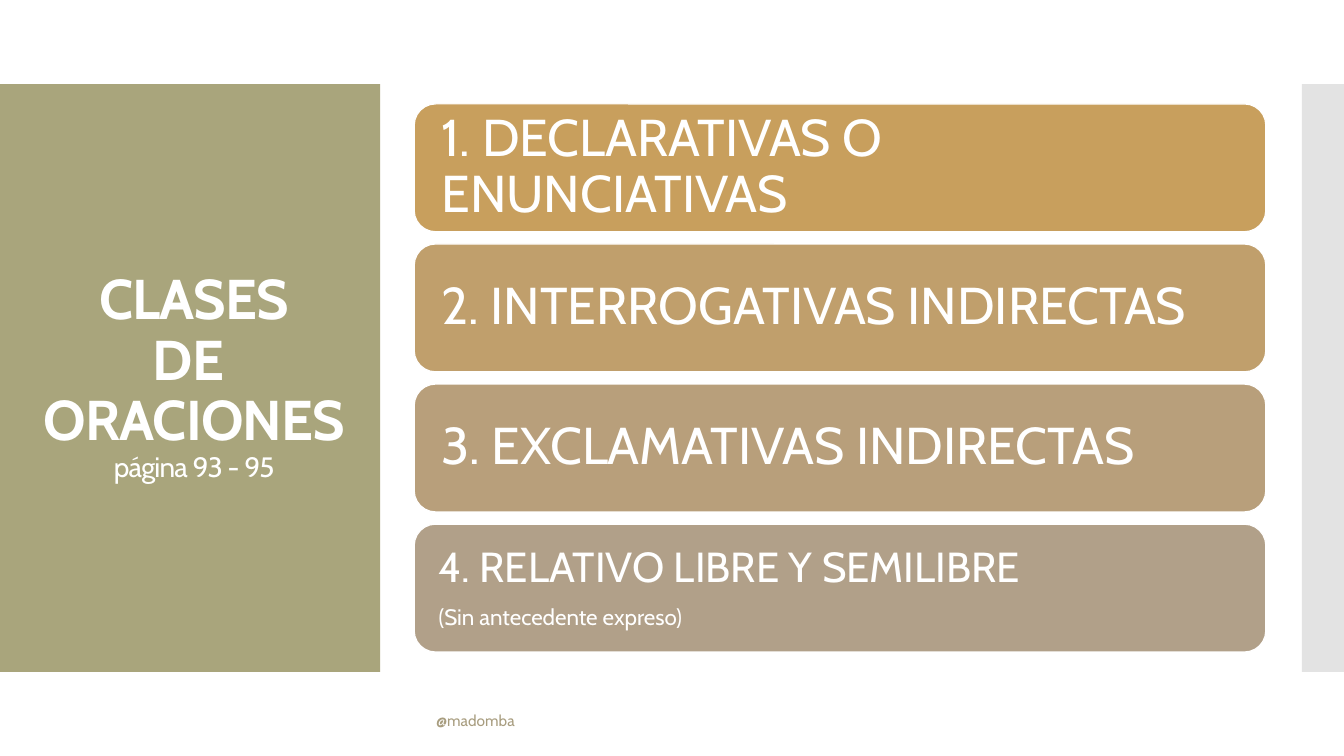
import pptx
import pptx.util
import pptx.dml.color
import pptx.enum.shapes
import pptx.enum.text
import pptx.oxml.ns
from lxml import etree

Cm, Pt = pptx.util.Cm, pptx.util.Pt
MIDDLE = pptx.enum.text.MSO_ANCHOR.MIDDLE
LEFT, CENTER = pptx.enum.text.PP_ALIGN.LEFT, pptx.enum.text.PP_ALIGN.CENTER

# Content
TITLE_LINES = ["CLASES", "DE ", "ORACIONES"]
PAGES = "página 93 - 95"
CARDS = [  # fill, inset in cm, lines as (text, size)
    ("card1", 0.53, [("1. DECLARATIVAS O ENUNCIATIVAS", 37)]),
    ("card2", 0.53, [("2. INTERROGATIVAS INDIRECTAS", 37)]),
    ("card3", 0.53, [("3. EXCLAMATIVAS INDIRECTAS", 37)]),
    ("card4", 0.46, [("4. RELATIVO LIBRE Y SEMILIBRE", 30),
                     ("(Sin antecedente expreso)", 16)]),
]
FOOTER = "@madomba"
FONT = "Cabin"
COLORS = {
    "white": "FFFFFF", "panel": "A9A57C", "strip": "C8C8C8", "footer": "A89D7F",
    "card1": "C89F5D", "card2": "C09F6C", "card3": "B89F7B", "card4": "B1A089",
}

# Layout in cm
SLIDE_W, SLIDE_H = 33.87, 19.05
BAND_TOP, BAND_H = 2.12, 14.81
PANEL_W, STRIP_W = 9.58, 1.06
CARD_LEFT, CARD_TOP, CARD_W, CARD_H, CARD_GAP = 10.44, 2.62, 21.46, 3.22, 0.31


def rgb(name):
    return pptx.dml.color.RGBColor.from_string(COLORS[name])


def add_block(s, kind, left, top, width, height, color):
    sp = s.shapes.add_shape(kind, Cm(left), Cm(top), Cm(width), Cm(height))
    sp.shadow.inherit = False
    sp.fill.solid()
    sp.fill.fore_color.rgb = rgb(color)
    sp.line.fill.background()
    return sp


def style(p, size, color="white", align=LEFT):
    p.alignment = align
    p.font.name, p.font.size = FONT, Pt(size)
    p.font.color.rgb = rgb(color)


prs = pptx.Presentation()
prs.slide_width, prs.slide_height = Cm(SLIDE_W), Cm(SLIDE_H)
s = prs.slides.add_slide(prs.slide_layouts[5])
RECT = pptx.enum.shapes.MSO_SHAPE.RECTANGLE
ROUNDED = pptx.enum.shapes.MSO_SHAPE.ROUNDED_RECTANGLE

# Side panel and half-transparent right strip
add_block(s, RECT, 0, BAND_TOP, PANEL_W, BAND_H, "panel")
strip = add_block(s, RECT, SLIDE_W - STRIP_W, BAND_TOP, STRIP_W, BAND_H, "strip")
strip_color = strip.fill._xPr.find(".//" + pptx.oxml.ns.qn("a:srgbClr"))
etree.SubElement(strip_color, pptx.oxml.ns.qn("a:alpha"), val="50000")

# Title, in front of the panel
title = s.shapes.title
s.shapes._spTree.append(title._element)
title.left, title.top, title.width, title.height = Cm(0.74), Cm(3.12), Cm(8.31), Cm(12.78)
tf = title.text_frame
tf.word_wrap, tf.vertical_anchor = True, MIDDLE
tf.auto_size = pptx.enum.text.MSO_AUTO_SIZE.NONE
p = tf.paragraphs[0]
style(p, 40, align=CENTER)
p.font.bold = True
p.line_spacing = 0.9
for line in TITLE_LINES:
    p.add_run().text = line
    p.add_line_break()
r = p.add_run()
r.text = PAGES
r.font.size, r.font.bold = Pt(20), False
for r in p.runs:
    r.font._element.set("spc", "-60")

# Cards
for i, (color, inset, lines) in enumerate(CARDS):
    top = CARD_TOP + i * (CARD_H + CARD_GAP)
    card = add_block(s, ROUNDED, CARD_LEFT, top, CARD_W, CARD_H, color)
    card.line.color.rgb, card.line.width = rgb("white"), Pt(0.85)
    tf = card.text_frame
    tf.word_wrap, tf.vertical_anchor = True, MIDDLE
    tf.margin_left = tf.margin_right = tf.margin_top = tf.margin_bottom = Cm(inset)
    for n, (text, size) in enumerate(lines):
        p = tf.add_paragraph() if n else tf.paragraphs[0]
        p.text = text
        style(p, size)
        p.line_spacing = 0.9
        # Space after as a share of the line
        after = p._p.get_or_add_pPr().get_or_add_spcAft()
        etree.SubElement(after, pptx.oxml.ns.qn("a:spcPct"), val="35000")

# Footer
box = s.shapes.add_textbox(Cm(10.74), Cm(17.65), Cm(16.41), Cm(1.02))
tf = box.text_frame
tf.word_wrap, tf.vertical_anchor = True, MIDDLE
p = tf.paragraphs[0]
p.text = FOOTER
style(p, 11, "footer")

prs.save("out.pptx")
